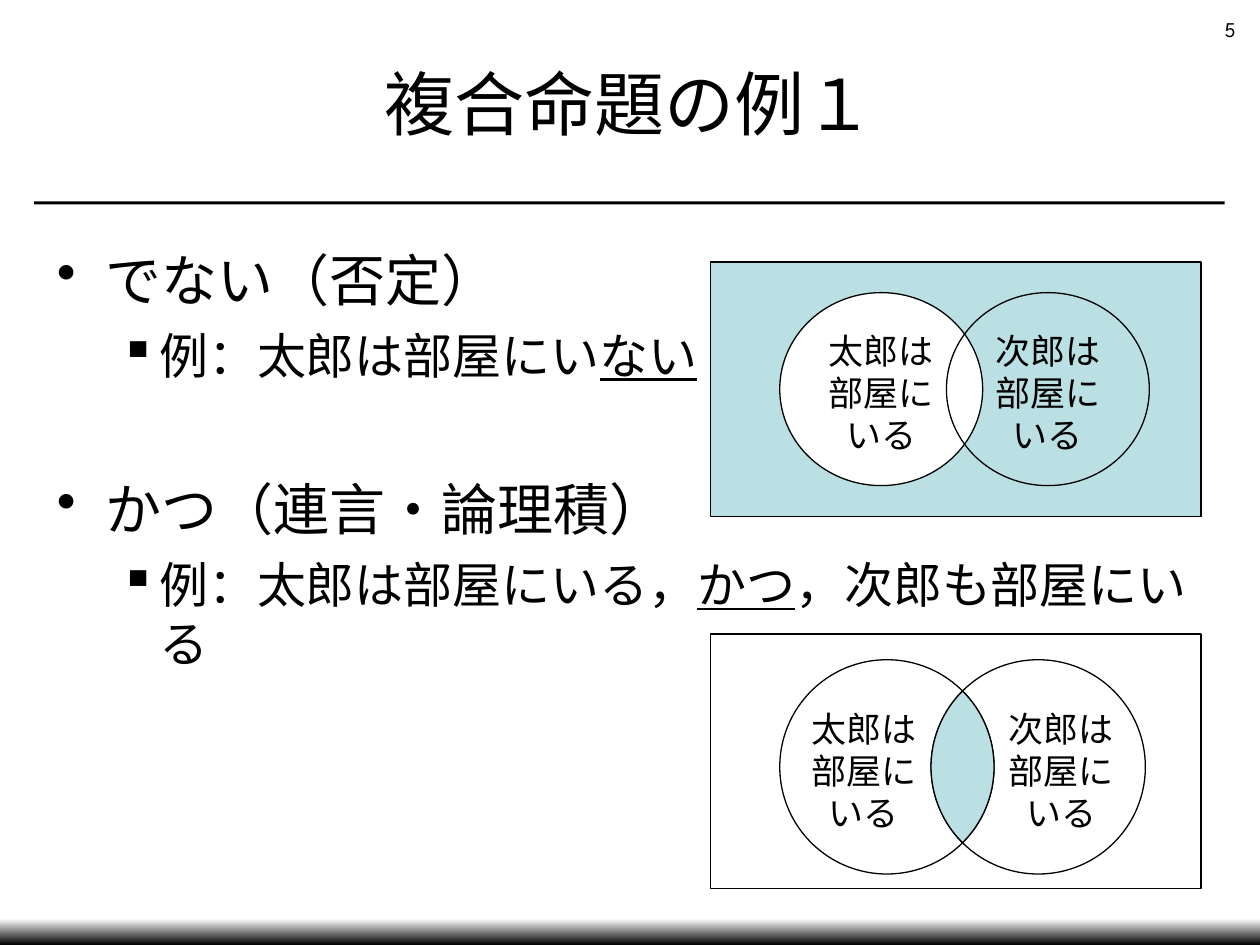
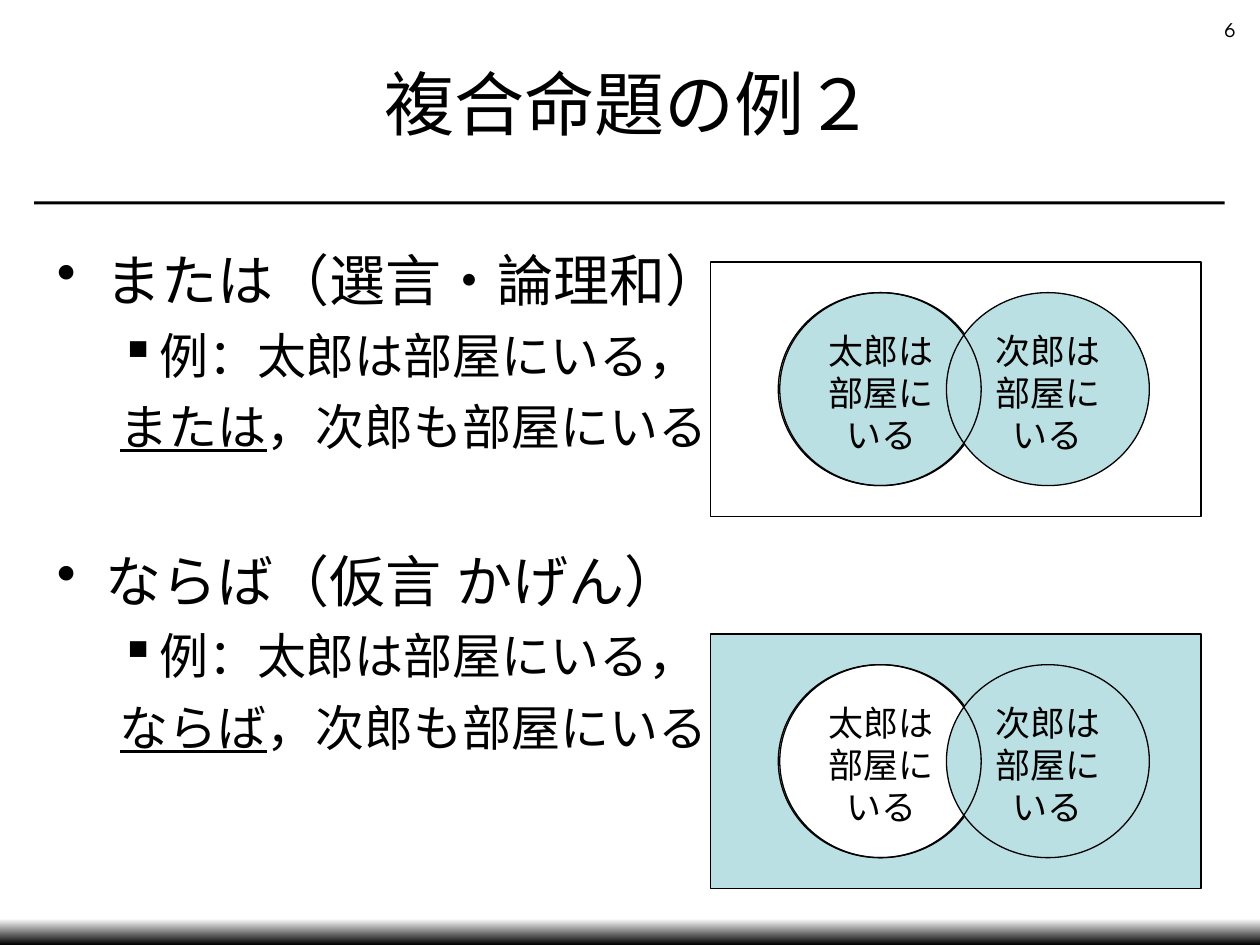
import math

from lxml import etree
from pptx import Presentation
from pptx import util as u
from pptx.dml.color import RGBColor
from pptx.enum import shapes, text
from pptx.oxml import ns

COLORS = {"ink": "000000", "paper": "FFFFFF", "shade": "BBE0E3"}
BODY_FONT, TITLE_FONT, NUMBER_FONT = "Arial", "Noto Sans CJK JP", "League Spartan"
MARGIN, CONTENT_W = 0.69, 24
PANEL_X, PANEL_W, PANEL_H = 14.33, 9.88, 5.13
PANEL_TOPS = (5.28, 12.78)
OVAL_W, OVAL_H = 4.09, 3.89
TARO_X, JIRO_X, OVAL_DROP = 15.72, 19.08, 0.62
TARO, JIRO = "太郎は部屋にいる", "次郎は部屋にいる"
# level: (size in pt, left margin in cm, hanging indent in cm, bullet)
LEVELS = {
    "head": (32, 0.97, -0.97, "•"),
    "example": (28, 2.06, -0.79, "▪"),
    "more": (28, 2.06, -0.79, None),
}
PARA_GAP, SECTION_GAP = 7.1, 52


class Deck:
    def __init__(self):
        self.prs = Presentation()
        self.prs.slide_width, self.prs.slide_height = u.Cm(25.4), u.Cm(19.05)
        self.s = None

    def rgb(self, name):
        return RGBColor.from_string(COLORS[name])

    def paint(self, sp, fill=None, line=None):
        sp.shadow.inherit = False
        if fill:
            sp.fill.solid()
            sp.fill.fore_color.rgb = self.rgb(fill)
        else:
            sp.fill.background()
        if line:
            sp.line.color.rgb = self.rgb(line)
            sp.line.width = u.Pt(0.75)
        else:
            sp.line.fill.background()
        return sp

    def shape(self, kind, x, y, w, h, fill=None, line=None):
        sp = self.s.shapes.add_shape(kind, u.Cm(x), u.Cm(y), u.Cm(w), u.Cm(h))
        return self.paint(sp, fill, line)

    def rect(self, *box, **style):
        return self.shape(shapes.MSO_SHAPE.RECTANGLE, *box, **style)

    def run(self, p, words, size, font=BODY_FONT, underline=False):
        r = p.add_run()
        r.text = words
        r.font.size, r.font.name = u.Pt(size), font
        r.font.color.rgb = self.rgb("ink")
        if underline:
            r.font.underline = True
        ea = etree.SubElement(r.font._element, ns.qn("a:ea"))
        ea.set("typeface", font)

    def oval(self, x, y, words=None, w=OVAL_W, h=OVAL_H, **style):
        sp = self.shape(shapes.MSO_SHAPE.OVAL, x, y, w, h, **style)
        if words:
            tf = sp.text_frame
            tf.word_wrap = True
            tf.vertical_anchor = text.MSO_ANCHOR.MIDDLE
            tf.margin_top, tf.margin_bottom = u.Pt(4), 0
            p = tf.paragraphs[0]
            p.alignment = text.PP_ALIGN.CENTER
            self.run(p, words, 20)

    def text_frame(self, x, y, w, h):
        tf = self.s.shapes.add_textbox(u.Cm(x), u.Cm(y), u.Cm(w), u.Cm(h)).text_frame
        tf.word_wrap = True
        return tf

    def centred(self, words, box, size, font, anchor=text.MSO_ANCHOR.TOP):
        tf = self.text_frame(*box)
        tf.vertical_anchor = anchor
        p = tf.paragraphs[0]
        p.alignment = text.PP_ALIGN.CENTER
        self.run(p, words, size, font)

    def new_slide(self, number, title):
        """Add a slide with its number, rule, bottom band and title."""
        self.s = self.prs.slides.add_slide(self.prs.slide_layouts[6])
        self.centred(str(number), (24.1, 0.2, 1.4, 0.71), 12, NUMBER_FONT)
        self.rect(MARGIN, 4.06, CONTENT_W, 0.06, fill="ink")
        band = self.rect(0, 18.52, 25.4, 0.53)
        band.fill.gradient()
        band.fill.gradient_angle = 270
        for stop, name, place in zip(band.fill.gradient_stops, ("paper", "ink"), (0, 1)):
            stop.color.rgb = self.rgb(name)
            stop.position = place
        self.centred(title, (MARGIN, 0.48, CONTENT_W, 3.18), 40, TITLE_FONT,
                     text.MSO_ANCHOR.MIDDLE)

    def body(self, rows):
        """Write rows of (level, runs); a run starting with _ is underlined."""
        tf = self.text_frame(MARGIN, 4.62, CONTENT_W, 13.72)
        tf.margin_left = tf.margin_right = u.Cm(0.46)
        tf.margin_top = u.Cm(0.33)
        for i, (level, runs) in enumerate(rows):
            size, left, hang, bullet = LEVELS[level]
            p = tf.add_paragraph() if i else tf.paragraphs[0]
            if i:
                p.space_before = u.Pt(SECTION_GAP if level == "head" else PARA_GAP)
            pPr = p._p.get_or_add_pPr()
            pPr.set("marL", str(u.Cm(left)))
            pPr.set("indent", str(u.Cm(hang)))
            if bullet:
                etree.SubElement(pPr, ns.qn("a:buChar")).set("char", bullet)
            else:
                etree.SubElement(pPr, ns.qn("a:buNone"))
            for words in runs:
                self.run(p, words.lstrip("_"), size, underline=words.startswith("_"))

    def panel(self, top, fill=None):
        self.rect(PANEL_X, top, PANEL_W, PANEL_H, fill=fill, line="ink")

    def venn(self, top, back=None, taro=None, jiro=None, outline=False):
        """Draw two labelled sets in a panel; outline redraws the left rim on top."""
        y = top + OVAL_DROP
        self.panel(top, back)
        self.oval(TARO_X, y, TARO, fill=taro, line="ink")
        self.oval(JIRO_X, y, JIRO, fill=jiro, line="ink")
        if outline:
            self.oval(TARO_X - 0.03, y, line="ink")

    def lens(self, left_x, right_x, y, radius, fill):
        """Fill the overlap of two equal circles with centres at one height."""
        half = math.acos((right_x - left_x) / 2 / radius)
        steps = 40
        points = []
        for cx, middle in ((left_x, 0), (right_x, math.pi)):
            for i in range(steps + 1):
                a = middle - half + 2 * half * i / steps
                points.append((u.Cm(cx + radius * math.cos(a)),
                               u.Cm(y + radius * math.sin(a))))
        builder = self.s.shapes.build_freeform(*points[0])
        builder.add_line_segments(points[1:], close=True)
        self.paint(builder.convert_to_shape(), fill, "ink")

    def intersection(self, top):
        """Draw a panel where only the overlap of both sets is shaded."""
        radius, centres, y = 2.16, (17.88, 20.93), 15.46
        self.panel(top)
        for cx in centres:
            self.oval(cx - radius, y - radius, w=2 * radius, h=2 * radius, line="ink")
        self.lens(*centres, y, radius, "shade")
        for x, words in ((15.37, TARO), (19.35, JIRO)):
            self.oval(x, 13.51, words)


def main():
    deck = Deck()
    upper, lower = PANEL_TOPS

    deck.new_slide(5, "複合命題の例１")
    deck.body([
        ("head", ["でない（否定）"]),
        ("example", ["例：太郎は部屋にい", "_ない"]),
        ("head", ["かつ（連言・論理積）"]),
        ("example", ["例：太郎は部屋にいる，", "_かつ", "，次郎も部屋にいる"]),
    ])
    deck.venn(upper, back="shade", taro="paper")
    deck.intersection(lower)

    deck.new_slide(6, "複合命題の例２")
    rows = []
    for head, word in (("または（選言・論理和）", "または"),
                       ("ならば（仮言 かげん）", "ならば")):
        rows += [
            ("head", [head]),
            ("example", ["例：太郎は部屋にいる，"]),
            ("more", ["_" + word, "，次郎も部屋にいる"]),
        ]
    deck.body(rows)
    deck.venn(upper, taro="shade", jiro="shade", outline=True)
    deck.venn(lower, back="shade", taro="paper", jiro="shade", outline=True)

    deck.prs.save("out.pptx")


if __name__ == "__main__":
    main()
